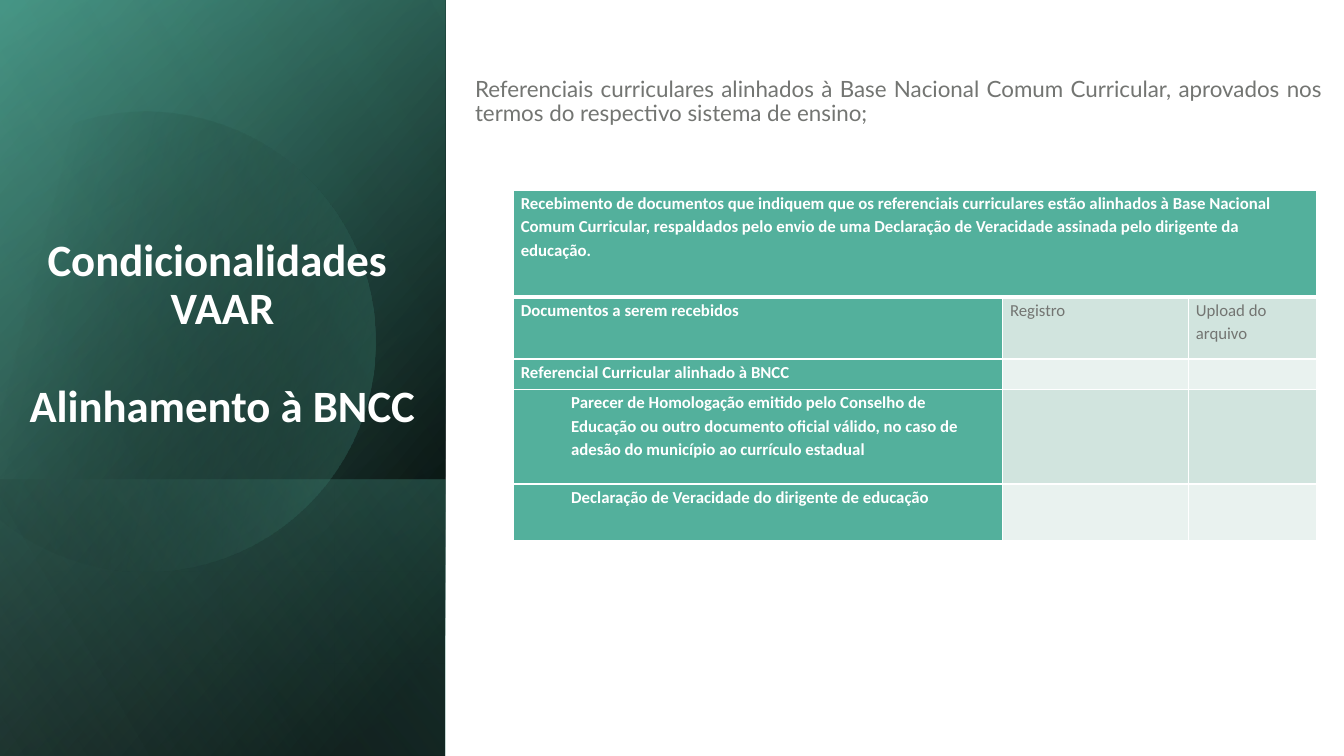
from dataclasses import dataclass
from math import cos, radians, sin

from lxml.etree import SubElement
from pptx import Presentation
from pptx.dml.color import RGBColor
from pptx.enum.shapes import MSO_SHAPE
from pptx.enum.text import MSO_ANCHOR, PP_ALIGN
from pptx.oxml.ns import qn
from pptx.util import Emu, Pt


@dataclass(frozen=True)
class Theme:
    black: str = "000000"
    white: str = "FFFFFF"
    grey: str = "737572"
    green: str = "53B09C"
    deep_green: str = "3D8576"
    pale_green: str = "98D0C4"
    band_dark: str = "D1E4DE"
    band_light: str = "E9F2EF"
    title_font: str = "Calibri"
    body_font: str = "Lato"
    title_size: int = 32
    body_size: int = 16
    table_size: int = 12


THEME = Theme()
TITLE = ["Condicionalidades \vVAAR", "Alinhamento à BNCC"]
SUBTITLE = ("Referenciais curriculares alinhados à Base Nacional Comum Curricular, "
            "aprovados nos termos do respectivo sistema de ensino;")
TABLE_HEADING = (
    "Recebimento de documentos que indiquem que os referenciais curriculares estão "
    "alinhados à Base Nacional Comum Curricular, respaldados pelo envio de uma "
    "Declaração de Veracidade assinada pelo dirigente da educação.")
ROWS = [
    (TABLE_HEADING, "", ""),
    ("Documentos a serem recebidos", "Registro", "Upload do arquivo"),
    ("Referencial Curricular alinhado à BNCC", "", ""),
    ("Parecer de Homologação emitido pelo Conselho de Educação ou outro documento "
     "oficial válido, no caso de adesão do município ao currículo estadual", "", ""),
    ("Declaração de Veracidade do dirigente de educação", "", ""),
]
INDENTED_ROWS = (3, 4)
ROW_HEIGHTS = [102, 59, 29, 90, 54]
COL_WIDTHS = [466, 177, 122]


def px(n):
    return Emu(round(n * 9525))


def rgb(color):
    return RGBColor.from_string(color)


def set_font(p, name, size, color, bold=False):
    p.font.name, p.font.size, p.font.bold = name, Pt(size), bold
    p.font.color.rgb = rgb(color)


def paint_gradient(sp, stops, angle):
    """Fill with (position, colour, opacity) stops in percent, at a clockwise angle."""
    sp.shadow.inherit = False
    sp.line.fill.background()
    sp.fill.gradient()
    sp.fill.gradient_angle = 360 - angle
    for stop, (position, color, _) in zip(sp.fill.gradient_stops, stops):
        stop.position = position / 100
        stop.color.rgb = rgb(color)
    for clr, (_, _, opacity) in zip(sp._element.spPr.iter(qn("a:srgbClr")), stops):
        if opacity < 100:
            SubElement(clr, qn("a:alpha"), val=str(opacity * 1000))


def add_layer(slide, x, y, w, h, stops, angle):
    """Add a mirrored rectangle on its side that covers the given box."""
    shift = (w - h) / 2
    sp = slide.shapes.add_shape(
        MSO_SHAPE.RECTANGLE, px(x + shift), px(y - shift), px(h), px(w))
    sp.rotation = 90
    sp._element.spPr.find(qn("a:xfrm")).set("flipH", "1")
    paint_gradient(sp, stops, angle)


def add_disc(slide, cx, cy, radius):
    """Add a tilted disc whose left side is cut off straight."""
    points = [(px(cx + radius * cos(radians(a))), px(cy + radius * sin(radians(a))))
              for a in range(-118, 151, 4)]
    builder = slide.shapes.build_freeform(*points[0], scale=1.0)
    builder.add_line_segments(points[1:], close=True)
    sp = builder.convert_to_shape()
    sp.rotation = 343.9
    paint_gradient(sp, [(29, THEME.black, 0), (100, THEME.green, 43)], 30)


def add_text(slide, x, y, w, h, anchor):
    tf = slide.shapes.add_textbox(px(x), px(y), px(w), px(h)).text_frame
    tf.word_wrap = True
    tf.vertical_anchor = anchor
    return tf


def draw_title_panel(slide, x, y, w, h):
    t = THEME
    foot = 263
    add_layer(slide, x, y, w, h, [(8, t.black, 100), (100, t.deep_green, 100)], 50)
    add_layer(slide, x, y, w, h, [(0, t.black, 0), (99, t.green, 46)], 30)
    add_layer(slide, x, y + h - foot, w, foot,
              [(2, t.green, 29), (100, t.black, 30)], 130)
    add_disc(slide, x + 138, y + 321, 219)
    add_layer(slide, x, y, w, h, [(0, t.black, 0), (99, t.pale_green, 11)], 120)

    tf = add_text(slide, x, y + 61, w, 355, MSO_ANCHOR.BOTTOM)
    for i, text in enumerate(TITLE):
        p = tf.add_paragraph() if i else tf.paragraphs[0]
        p.text = text
        p.alignment = PP_ALIGN.CENTER
        p.line_spacing = 0.9
        if i:
            p.space_before = Pt(35)
        set_font(p, t.title_font, t.title_size, t.white, True)


def draw_subtitle(slide, x, y, w, h):
    tf = add_text(slide, x, y, w, h, MSO_ANCHOR.MIDDLE)
    tf.margin_top = px(19)
    p = tf.paragraphs[0]
    p.text = SUBTITLE
    p.alignment = PP_ALIGN.JUSTIFY
    p.line_spacing = 0.9
    set_font(p, THEME.body_font, THEME.body_size, THEME.grey)


def set_borders(cell, top=1, bottom=1):
    tcPr = cell._tc.get_or_add_tcPr()
    for side, width in zip("LRTB", (1, 1, top, bottom)):
        ln = SubElement(tcPr, qn(f"a:ln{side}"), w=str(Pt(width)))
        fill = SubElement(ln, qn("a:solidFill"))
        SubElement(fill, qn("a:srgbClr"), val=THEME.white)


def fill_cell(cell, text, fill, color, bold, indent):
    cell.margin_left = cell.margin_right = px(7)
    cell.margin_top = cell.margin_bottom = 0
    cell.fill.solid()
    cell.fill.fore_color.rgb = rgb(fill)
    p = cell.text_frame.paragraphs[0]
    p.text = text
    p.line_spacing = 1.15
    if indent:
        p._p.get_or_add_pPr().set("marL", str(px(indent)))
    set_font(p, THEME.title_font, THEME.table_size, color, bold)


def draw_documents_table(slide, x, y):
    tbl = slide.shapes.add_table(
        len(ROWS), len(COL_WIDTHS), px(x), px(y),
        px(sum(COL_WIDTHS)), px(sum(ROW_HEIGHTS))).table
    tbl.first_row = tbl.horz_banding = False
    for col, width in zip(tbl.columns, COL_WIDTHS):
        col.width = px(width)
    for r, texts in enumerate(ROWS):
        tbl.rows[r].height = px(ROW_HEIGHTS[r])
        band = THEME.band_dark if r % 2 else THEME.band_light
        for c, text in enumerate(texts):
            cell = tbl.cell(r, c)
            head = r == 0 or c == 0
            set_borders(cell, top=3 if r == 1 else 1, bottom=3 if r == 0 else 1)
            fill_cell(cell, text, THEME.green if head else band,
                      THEME.white if head else THEME.grey, head,
                      48 if c == 0 and r in INDENTED_ROWS else 0)
    tbl.cell(0, 0).merge(tbl.cell(0, len(COL_WIDTHS) - 1))


def main():
    prs = Presentation()
    prs.slide_width, prs.slide_height = px(1280), px(720)
    slide = prs.slides.add_slide(prs.slide_layouts[6])
    draw_title_panel(slide, 0, 0, 424, 720)
    draw_subtitle(slide, 443, 42, 826, 97)
    draw_documents_table(slide, 489, 181)
    prs.save("out.pptx")


if __name__ == "__main__":
    main()
